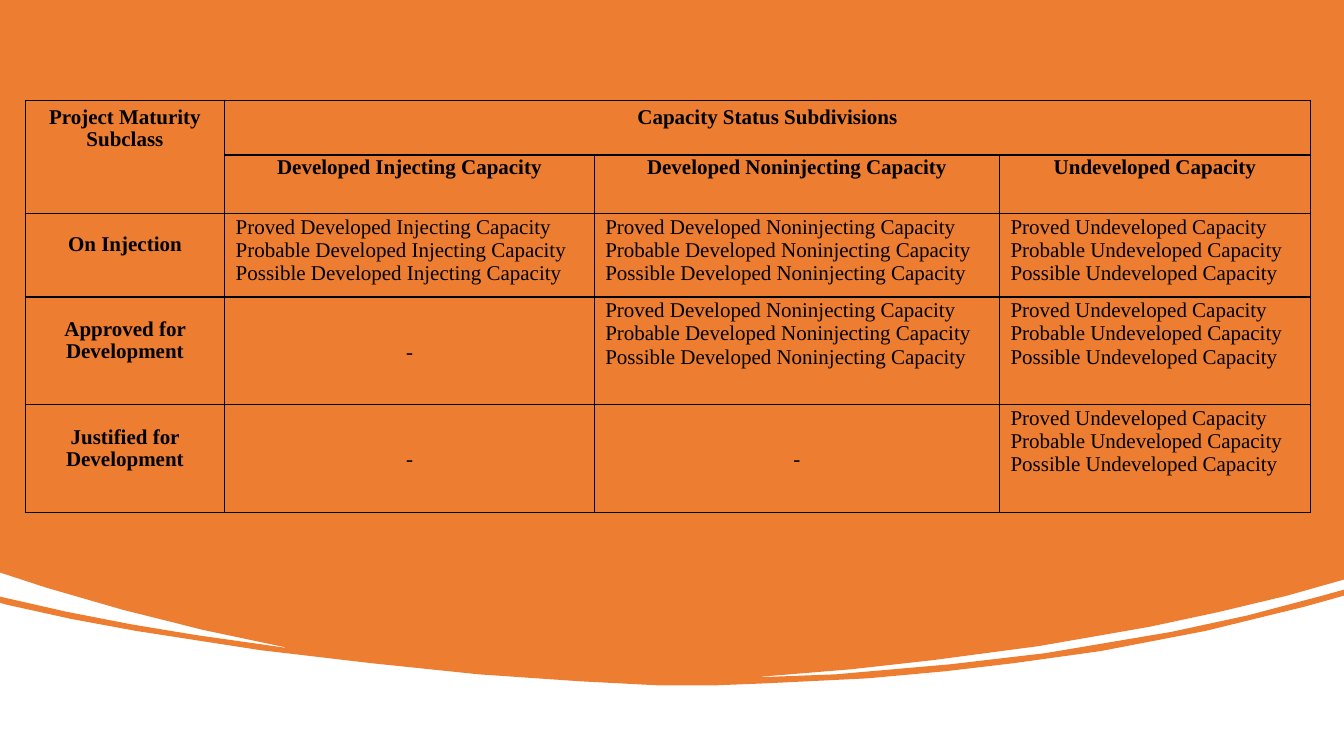
"""Build a slide with a table of capacity categories by project maturity over an orange curved panel."""
from dataclasses import dataclass

from lxml.etree import SubElement
from pptx import Presentation
from pptx.dml.color import RGBColor
from pptx.enum.text import MSO_VERTICAL_ANCHOR as Anchor, PP_PARAGRAPH_ALIGNMENT as Align
from pptx.oxml.ns import qn
from pptx.util import Pt


@dataclass(frozen=True)
class Theme:
    font: str = "Times New Roman"
    text_size: float = 15
    heading_leading: float = 15.6
    border_width: float = 1
    panel: str = "ED7D31"
    ink: str = "000000"


theme = Theme()


def write_cell(cell, text, bold=False, align=Align.CENTER, anchor=Anchor.TOP,
               leading=None, margins=(7.9, 1.4, 7.9, 0)):
    cell.margin_left, cell.margin_top, cell.margin_right, cell.margin_bottom = map(Pt, margins)
    cell.vertical_anchor = anchor
    cell.text_frame.text = text
    for paragraph in cell.text_frame.paragraphs:
        paragraph.alignment = align
        if leading:
            paragraph.line_spacing = Pt(leading)
        for run in paragraph.runs:
            run.font.name = theme.font
            run.font.size = Pt(theme.text_size)
            run.font.bold = bold
            run.font.color.rgb = RGBColor.from_string(theme.ink)


def add_borders(cell):
    properties = cell._tc.get_or_add_tcPr()
    for side in ("lnL", "lnR", "lnT", "lnB"):
        line = SubElement(properties, qn(f"a:{side}"), w=str(Pt(theme.border_width)))
        fill = SubElement(line, qn("a:solidFill"))
        SubElement(fill, qn("a:srgbClr"), val=theme.ink)


presentation = Presentation()
presentation.slide_width = Pt(960)
presentation.slide_height = Pt(540)
slide = presentation.slides.add_slide(presentation.slide_layouts[6])

panel_top = [(0, 0), (960, 0)]
right_upper_curve = [
    (960, 414), (949.7, 416.9), (919.4, 425.5), (870.4, 437.2), (820.8, 447.8),
    (742.3, 461.5), (666, 471.6), (607.7, 478.1), (547.2, 483.1), (535, 484.6),
]
right_slit_floor = [
    (542.2, 483.8), (596.9, 481.7), (679, 474.5), (746.6, 466.6), (836.6, 451.4),
    (891.2, 439.6), (944.6, 425.5), (960, 421.2),
]
lower_curve = [
    (960, 425.5), (931.7, 433.4), (861.1, 450.7), (786.2, 465.1), (723.6, 473.8),
    (675.4, 479.5), (619.2, 484.6), (545.8, 488.2), (509.8, 489.6), (470.9, 489.6),
    (414.7, 486.7), (342, 481.7), (265.7, 473.8), (185.8, 464.4), (97.2, 450.7),
    (51.1, 442.2), (5, 432), (0, 430.6),
]
left_slit_floor = [(0, 426.2), (47.5, 437), (93.3, 445.9), (139.7, 453.6), (205.9, 463)]
left_upper_curve = [(203, 462.2), (145.2, 450), (87.8, 435.6), (33.1, 419.8), (0, 409)]

outline = (panel_top + right_upper_curve + right_slit_floor + lower_curve
           + left_slit_floor + left_upper_curve)
start, *corners = [(Pt(x), Pt(y)) for x, y in outline]
builder = slide.shapes.build_freeform(*start)
builder.add_line_segments(corners, close=True)
panel = builder.convert_to_shape()
panel.shadow.inherit = False
panel.fill.solid()
panel.fill.fore_color.rgb = RGBColor.from_string(theme.panel)
panel.line.fill.background()

column_widths = [142.5, 264, 289.5, 222]
row_heights = [39, 42, 59.5, 77, 77]
table = slide.shapes.add_table(
    len(row_heights), len(column_widths), Pt(18), Pt(71.75),
    Pt(sum(column_widths)), Pt(sum(row_heights))).table
table.first_row = False
table.horz_banding = False
for column, width in zip(table.columns, column_widths):
    column.width = Pt(width)
for row, height in zip(table.rows, row_heights):
    row.height = Pt(height)
for cell in table.iter_cells():
    add_borders(cell)
    cell.fill.background()

table.cell(0, 0).merge(table.cell(1, 0))
table.cell(0, 1).merge(table.cell(0, 3))

heading = dict(bold=True, leading=theme.heading_leading)
top_margins = (10.8, 5, 10.8, 5)
write_cell(table.cell(0, 0), "Project Maturity Subclass", margins=top_margins, **heading)
write_cell(table.cell(0, 1), "Capacity Status Subdivisions", margins=top_margins, **heading)

statuses = ["Developed Injecting", "Developed Noninjecting", "Undeveloped"]
certainties = ["Proved", "Probable", "Possible"]
subclasses = ["On Injection", "Approved for Development", "Justified for Development"]

for column_index, status in enumerate(statuses, 1):
    write_cell(table.cell(1, column_index), f"{status} Capacity", **heading)

for first_status, subclass in enumerate(subclasses):
    row_index = first_status + 2
    write_cell(table.cell(row_index, 0), subclass, anchor=Anchor.MIDDLE,
               margins=(7.9, 1.4, 7.9, theme.heading_leading), **heading)
    for status_index, status in enumerate(statuses):
        cell = table.cell(row_index, status_index + 1)
        if status_index < first_status:
            write_cell(cell, "-", anchor=Anchor.MIDDLE)
        else:
            categories = [f"{certainty} {status} Capacity" for certainty in certainties]
            write_cell(cell, "\n".join(categories), align=Align.JUSTIFY)

presentation.save("out.pptx")
